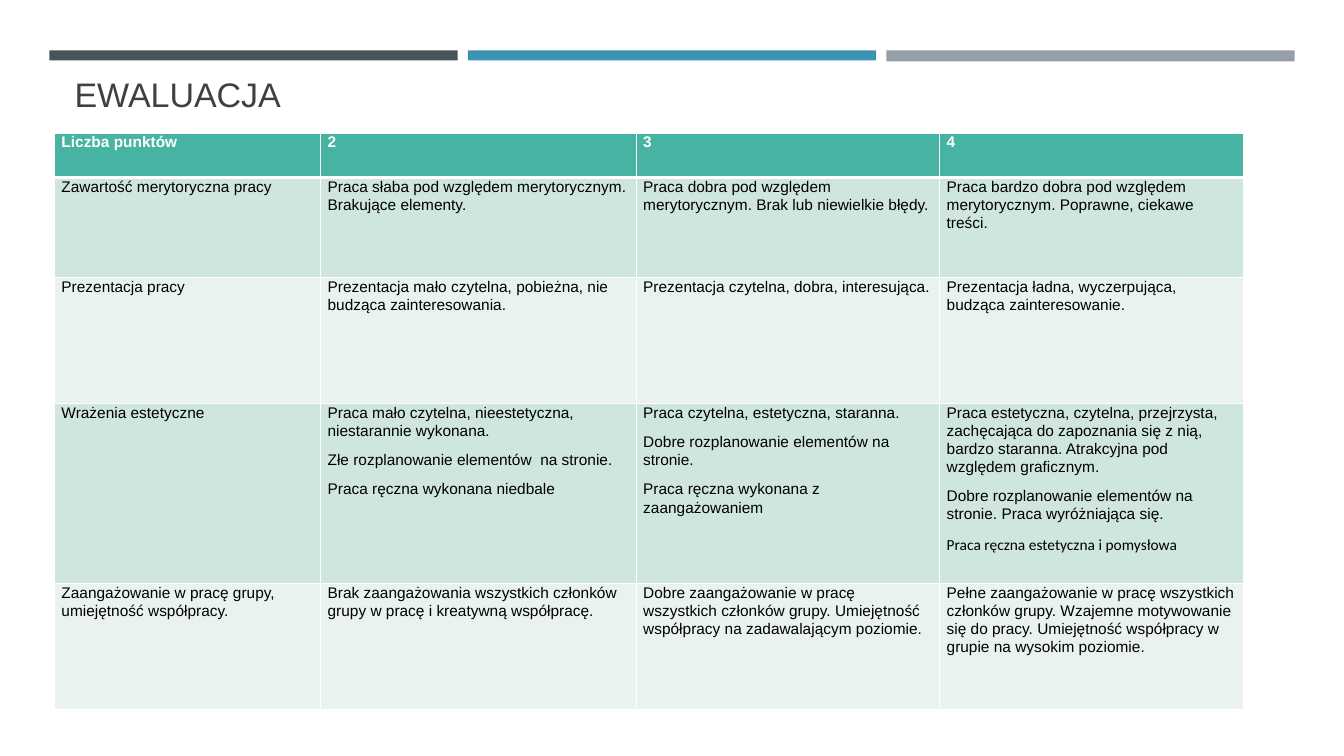
"""Build the evaluation slide: three header bars, a title and a grading table."""
from dataclasses import dataclass
from typing import Any

from lxml import etree
from pptx import Presentation
from pptx import util as u
from pptx.dml import color
from pptx.enum import shapes, text
from pptx.oxml import ns


@dataclass(frozen=True)
class Theme:
    font: str = "Arial"
    accent_font: str = "Calibri"
    title_size: float = 24.3
    cell_size: float = 11
    title: str = "404040"
    header_text: str = "FFFFFF"
    body_text: str = "000000"
    header_fill: str = "46B3A3"
    odd_fill: str = "CFE5E0"
    even_fill: str = "E9F2F0"
    border: str = "FFFFFF"


@dataclass(frozen=True)
class Bar:
    left: float
    height: float
    fill: str


THEME = Theme()
BARS = [Bar(0.49, 0.1, "465359"), Bar(4.64, 0.1, "3B92B1"), Bar(8.79, 0.11, "969FA7")]
COLUMN_WIDTHS = [2.64, 3.13, 3.01, 3.01]
ROW_HEIGHTS = [0.44, 0.99, 1.25, 1.79, 1.25]
HANDWORK_PRAISE = "Praca ręczna estetyczna i pomysłowa"
GRADES = [
    ["Liczba punktów", "2", "3", "4"],
    [
        "Zawartość merytoryczna pracy",
        "Praca słaba pod względem merytorycznym. Brakujące elementy.",
        "Praca dobra pod względem merytorycznym. Brak lub niewielkie błędy.",
        "Praca bardzo dobra pod względem merytorycznym. Poprawne, ciekawe treści.",
    ],
    [
        "Prezentacja pracy",
        "Prezentacja mało czytelna, pobieżna, nie budząca zainteresowania.",
        "Prezentacja czytelna, dobra, interesująca.",
        "Prezentacja ładna, wyczerpująca, budząca zainteresowanie.",
    ],
    [
        "Wrażenia estetyczne",
        "Praca mało czytelna, nieestetyczna, niestarannie wykonana.\n"
        "Złe rozplanowanie elementów  na stronie.\n"
        "Praca ręczna wykonana niedbale",
        "Praca czytelna, estetyczna, staranna.\n"
        "Dobre rozplanowanie elementów na stronie.\n"
        "Praca ręczna wykonana z zaangażowaniem",
        "Praca estetyczna, czytelna, przejrzysta, zachęcająca do zapoznania się z nią, "
        "bardzo staranna. Atrakcyjna pod względem graficznym.\n"
        "Dobre rozplanowanie elementów na stronie. Praca wyróżniająca się.\n"
        + HANDWORK_PRAISE,
    ],
    [
        "Zaangażowanie w pracę grupy, umiejętność współpracy.",
        "Brak zaangażowania wszystkich członków grupy w pracę i kreatywną współpracę.",
        "Dobre zaangażowanie w pracę wszystkich członków grupy. "
        "Umiejętność współpracy na zadawalającym poziomie.",
        "Pełne zaangażowanie w pracę wszystkich członków grupy. Wzajemne motywowanie "
        "się do pracy. Umiejętność współpracy w grupie na wysokim poziomie.",
    ],
]


def apply(target: Any, values: dict[str, Any]) -> None:
    for name, value in values.items():
        setattr(target, name, value)


def style_span(span: Any, size: float, fill: str, bold: bool = False,
               font: str = THEME.font) -> None:
    apply(span.font, {"name": font, "size": u.Pt(size), "bold": bold})
    span.font.color.rgb = color.RGBColor.from_string(fill)


def draw_bar(page: Any, bar: Bar) -> None:
    box = page.shapes.add_shape(shapes.MSO_SHAPE.RECTANGLE, u.Inches(bar.left),
                                u.Inches(0.5), u.Inches(4.05), u.Inches(bar.height))
    box.shadow.inherit = False
    box.fill.solid()
    box.fill.fore_color.rgb = color.RGBColor.from_string(bar.fill)
    box.line.fill.background()


def draw_title(page: Any, wording: str) -> None:
    box = page.shapes.title
    apply(box, {"left": u.Inches(0.64), "top": u.Inches(0.77),
                "width": u.Inches(12.06), "height": u.Inches(0.42)})
    apply(box.text_frame, {"auto_size": text.MSO_AUTO_SIZE.NONE, "word_wrap": True,
                           "vertical_anchor": text.MSO_ANCHOR.BOTTOM})
    para = box.text_frame.paragraphs[0]
    apply(para, {"alignment": text.PP_ALIGN.LEFT, "line_spacing": 0.9})
    span = para.add_run()
    span.text = wording
    style_span(span, THEME.title_size, THEME.title)


def set_borders(cell: Any, top: float, bottom: float) -> None:
    properties = cell._tc.get_or_add_tcPr()
    widths = {"a:lnL": 1, "a:lnR": 1, "a:lnT": top, "a:lnB": bottom}
    for position, (tag, width) in enumerate(widths.items()):
        line = etree.Element(ns.qn(tag), w=str(u.Pt(width)))
        fill = etree.SubElement(line, ns.qn("a:solidFill"))
        etree.SubElement(fill, ns.qn("a:srgbClr"), val=THEME.border)
        properties.insert(position, line)


def fill_cell(cell: Any, row: int, wording: str) -> None:
    header = row == 0
    fill = THEME.header_fill if header else THEME.odd_fill if row % 2 else THEME.even_fill
    cell.fill.solid()
    cell.fill.fore_color.rgb = color.RGBColor.from_string(fill)
    set_borders(cell, 3 if row == 1 else 1, 3 if header else 1)
    apply(cell, {"margin_left": u.Inches(0.07), "margin_right": u.Inches(0.07),
                 "margin_top": 0, "margin_bottom": 0,
                 "vertical_anchor": text.MSO_ANCHOR.TOP})
    cell.text_frame.text = wording
    for para in cell.text_frame.paragraphs:
        apply(para, {"line_spacing": 1.06, "space_after": u.Pt(8)})
        for span in para.runs:
            font = THEME.accent_font if span.text == HANDWORK_PRAISE else THEME.font
            style_span(span, THEME.cell_size,
                       THEME.header_text if header else THEME.body_text, header, font)


def draw_grades(page: Any) -> None:
    table = page.shapes.add_table(
        len(GRADES), len(COLUMN_WIDTHS), u.Inches(0.54), u.Inches(1.32),
        u.Inches(sum(COLUMN_WIDTHS)), u.Inches(sum(ROW_HEIGHTS))).table
    for column, width in zip(table.columns, COLUMN_WIDTHS):
        column.width = u.Inches(width)
    for row, height in enumerate(ROW_HEIGHTS):
        table.rows[row].height = u.Inches(height)
        for column, wording in enumerate(GRADES[row]):
            fill_cell(table.cell(row, column), row, wording)


def main() -> None:
    deck = Presentation()
    apply(deck, {"slide_width": u.Inches(13.33), "slide_height": u.Inches(7.5)})
    page = deck.slides.add_slide(deck.slide_layouts[5])
    for bar in BARS:
        draw_bar(page, bar)
    draw_title(page, "EWALUACJA")
    draw_grades(page)
    deck.save("out.pptx")


if __name__ == "__main__":
    main()
